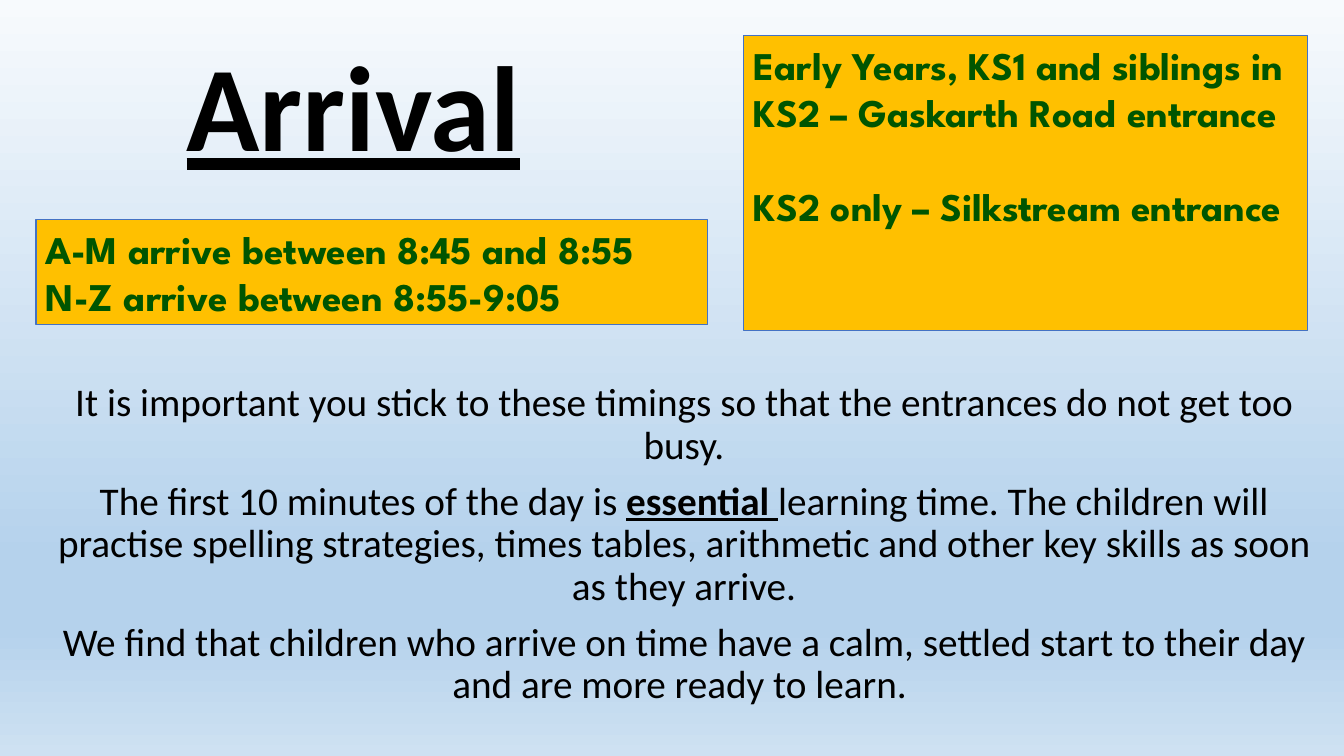
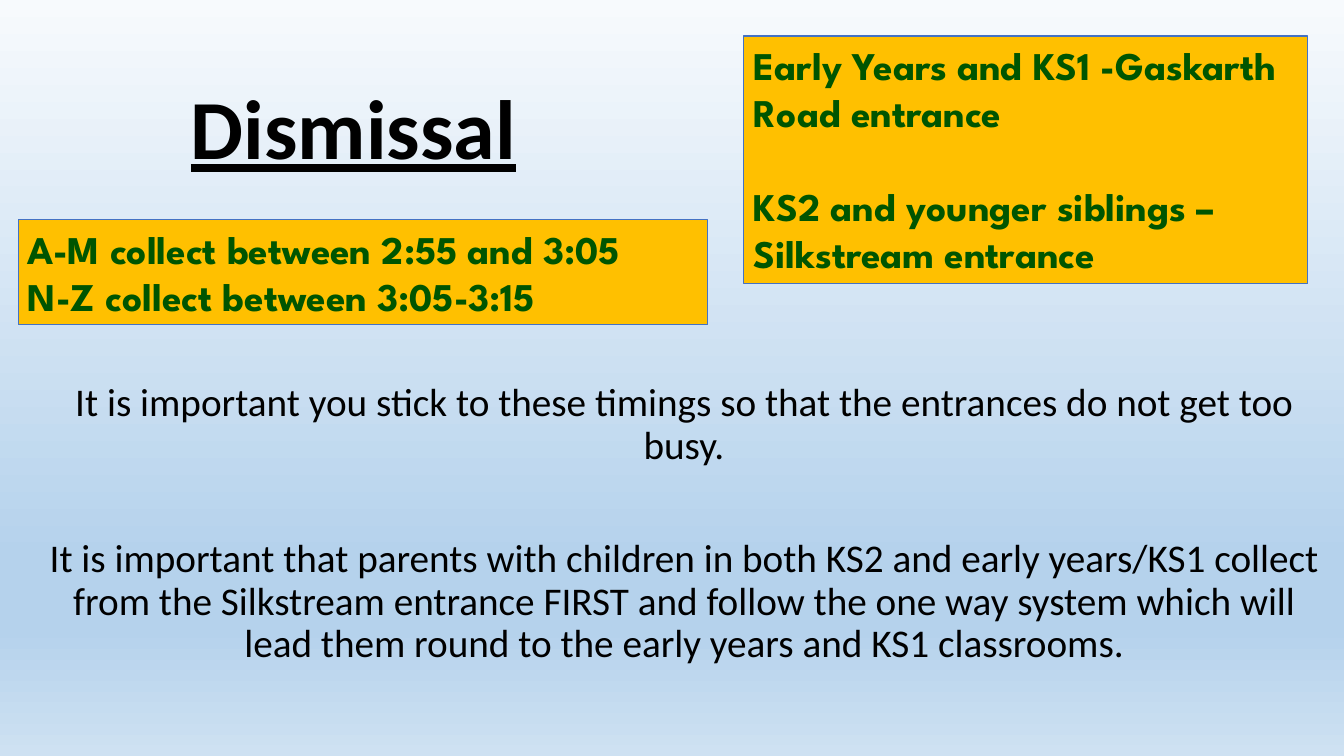
from lxml import etree
from pptx import Presentation
from pptx import util as u
from pptx.dml.color import RGBColor
from pptx.enum import shapes, text
from pptx.oxml.ns import qn

PX = 914400 / 100.8
SLIDE_SIZE = (1344, 756)
COLORS = {
    "text": "000000",
    "callout": "FFC000",
    "callout_line": "4472C4",
    "callout_text": "005500",
}
BACKGROUND_STOPS = [(0, "F7FAFD"), (74, "B5D2EC"), (83, "B5D2EC"), (100, "CEE1F2")]
BODY_FONT, CALLOUT_FONT = "Calibri", "League Spartan"
TEXT_SIZE = 28
CALLOUT_GAP = 33.6

TITLE_BOX = (156, 28, 395, 155)
BODY_BOX = (37, 378, 1294, 378)
CALLOUT_TOP = 220
CALLOUT_RIGHT = 708
CALLOUT_HEIGHT = 105
ENTRANCE_BOX = (744, 36, 564)

TIMING_NOTE = "It is important you stick to these timings so that the entrances do not get too busy."

PAGES = [
    {
        "title": "Arrival",
        "title_size": 86.4,
        "times_left": 36,
        "times": ["A-M arrive between 8:45 and 8:55", "N-Z arrive between 8:55-9:05"],
        "entrance_height": 295,
        "entrances": [
            "Early Years, KS1 and siblings in KS2 – Gaskarth Road entrance",
            "KS2 only – Silkstream entrance",
        ],
        "body_gap": 10,
        "body": [
            [TIMING_NOTE],
            [
                "The first 10 minutes of the day is ",
                "essential ",
                "learning time. The children will practise spelling strategies, times tables, "
                "arithmetic and other key skills as soon as they arrive.",
            ],
            [
                "We find that children who arrive on time have a calm, settled start to their day "
                "and are more ready to learn. "
            ],
        ],
    },
    {
        "title": "Dismissal",
        "title_size": 60,
        "times_left": 18,
        "times": ["A-M collect between 2:55 and 3:05", "N-Z collect between 3:05-3:15"],
        "entrance_height": 248,
        "entrances": [
            "Early Years and KS1 -Gaskarth Road entrance",
            "KS2 and younger siblings – Silkstream entrance",
        ],
        "body_gap": 51,
        "body": [
            [TIMING_NOTE],
            [
                "It is important that parents with children in both KS2 and early years/KS1 collect "
                "from the Silkstream entrance FIRST and follow the one way system which will lead "
                "them round to the early years and KS1 classrooms."
            ],
        ],
    },
]


def emu(*lengths):
    return [u.Emu(round(length * PX)) for length in lengths]


def color(name):
    return RGBColor.from_string(COLORS[name])


def paint_background(master):
    """Give every slide the same vertical gradient."""
    fill = master.background.fill
    fill.gradient()
    fill.gradient_angle = 270
    stop_list = next(master.element.iter(qn("a:gsLst")))
    for stop in list(stop_list):
        stop_list.remove(stop)
    for position, value in BACKGROUND_STOPS:
        stop = etree.SubElement(stop_list, qn("a:gs"), pos=str(position * 1000))
        etree.SubElement(stop, qn("a:srgbClr"), val=value)


def style_runs(paragraph, font_name, size, color_name, bold=False, underline=False):
    for run in paragraph.runs:
        font = run.font
        font.name, font.size = font_name, u.Pt(size)
        font.bold, font.underline = bold, underline
        font.color.rgb = color(color_name)


def add_centered_text(slide, box, anchor):
    text_frame = slide.shapes.add_textbox(*emu(*box)).text_frame
    text_frame.word_wrap = True
    text_frame.vertical_anchor = anchor
    return text_frame


def center(paragraph):
    paragraph.alignment = text.PP_ALIGN.CENTER
    paragraph.line_spacing = 0.9


def add_title(slide, box, title, size):
    text_frame = add_centered_text(slide, box, text.MSO_ANCHOR.BOTTOM)
    text_frame.text = title
    paragraph = text_frame.paragraphs[0]
    center(paragraph)
    style_runs(paragraph, BODY_FONT, size, "text", bold=True, underline=True)


def add_body(slide, box, paragraphs, gap):
    """Each paragraph is a list of pieces; every second piece is emphasised."""
    text_frame = add_centered_text(slide, box, text.MSO_ANCHOR.TOP)
    for index, pieces in enumerate(paragraphs):
        paragraph = text_frame.add_paragraph() if index else text_frame.paragraphs[0]
        center(paragraph)
        if index:
            paragraph.space_before = u.Pt(gap)
        for piece in pieces:
            paragraph.add_run().text = piece
        style_runs(paragraph, BODY_FONT, TEXT_SIZE, "text")
        for run in paragraph.runs[1::2]:
            run.font.bold = run.font.underline = True


def add_callout(slide, box, lines, gap=0):
    shape = slide.shapes.add_shape(shapes.MSO_SHAPE.RECTANGLE, *emu(*box))
    shape.shadow.inherit = False
    shape.fill.solid()
    shape.fill.fore_color.rgb = color("callout")
    shape.line.color.rgb = color("callout_line")
    shape.line.width = u.Pt(0.75)
    text_frame = shape.text_frame
    text_frame.word_wrap = True
    text_frame.vertical_anchor = text.MSO_ANCHOR.TOP
    text_frame.text = "\n".join(lines)
    for index, paragraph in enumerate(text_frame.paragraphs):
        paragraph.alignment = text.PP_ALIGN.LEFT
        if index:
            paragraph.space_before = u.Pt(gap)
        style_runs(paragraph, CALLOUT_FONT, TEXT_SIZE, "callout_text", bold=True)


def add_page(presentation, page):
    slide = presentation.slides.add_slide(presentation.slide_layouts[6])
    add_title(slide, TITLE_BOX, page["title"], page["title_size"])
    add_body(slide, BODY_BOX, page["body"], page["body_gap"])
    left = page["times_left"]
    times_box = (left, CALLOUT_TOP, CALLOUT_RIGHT - left, CALLOUT_HEIGHT)
    add_callout(slide, times_box, page["times"])
    entrance_box = (*ENTRANCE_BOX, page["entrance_height"])
    add_callout(slide, entrance_box, page["entrances"], CALLOUT_GAP)


def main():
    presentation = Presentation()
    presentation.slide_width, presentation.slide_height = emu(*SLIDE_SIZE)
    paint_background(presentation.slide_master)
    for page in PAGES:
        add_page(presentation, page)
    presentation.save("out.pptx")


if __name__ == "__main__":
    main()
